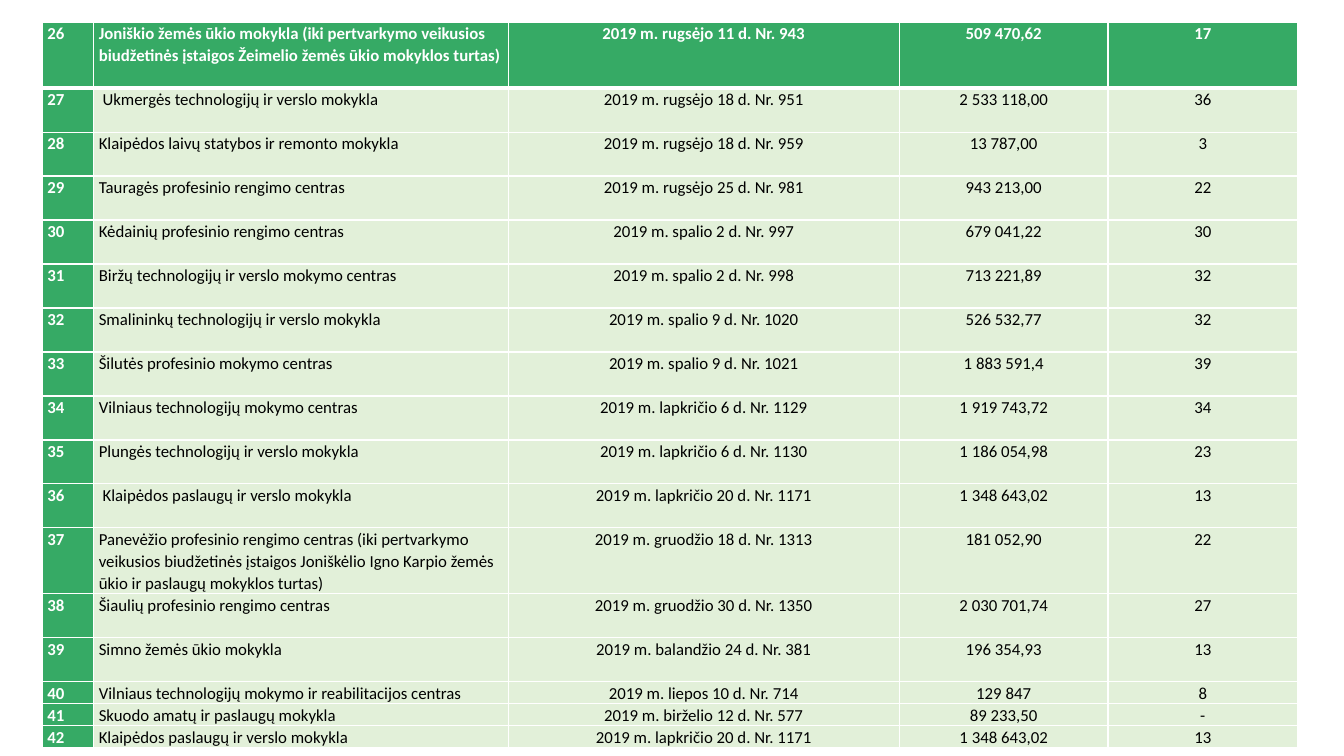
from lxml.etree import SubElement
from pptx import Presentation
from pptx.dml.color import RGBColor
from pptx.enum.text import PP_ALIGN as Align
from pptx.oxml.ns import qn
from pptx.util import Inches, Pt

COLORS = {"green": "36AA65", "pale": "E2F0D9", "white": "FFFFFF", "black": "000000"}
COLUMN_WIDTHS = [0.51, 4.11, 3.88, 2.07, 1.88]
TABLE_HEIGHT = 7.2
FIRST_NUMBER = 26

# Height in text lines, school, decision, property value, count
SCHOOLS = [
    (3, "Joniškio žemės ūkio mokykla (iki pertvarkymo veikusios biudžetinės įstaigos "
        "Žeimelio žemės ūkio mokyklos turtas)",
     "2019 m. rugsėjo 11 d. Nr. 943", "509 470,62", "17"),
    (2, " Ukmergės technologijų ir verslo mokykla",
     "2019 m. rugsėjo 18 d. Nr. 951", "2 533 118,00", "36"),
    (2, "Klaipėdos laivų statybos ir remonto mokykla",
     "2019 m. rugsėjo 18 d. Nr. 959", "13 787,00", "3"),
    (2, "Tauragės profesinio rengimo centras",
     "2019 m. rugsėjo 25 d. Nr. 981", "943 213,00", "22"),
    (2, "Kėdainių profesinio rengimo centras",
     "2019 m. spalio 2 d. Nr. 997", "679 041,22", "30"),
    (2, "Biržų technologijų ir verslo mokymo centras",
     "2019 m. spalio 2 d. Nr. 998", "713 221,89", "32"),
    (2, "Smalininkų technologijų ir verslo mokykla",
     "2019 m. spalio 9 d. Nr. 1020", "526 532,77", "32"),
    (2, "Šilutės profesinio mokymo centras",
     "2019 m. spalio 9 d. Nr. 1021", "1 883 591,4", "39"),
    (2, "Vilniaus technologijų mokymo centras",
     "2019 m. lapkričio 6 d. Nr. 1129", "1 919 743,72", "34"),
    (2, "Plungės technologijų ir verslo mokykla",
     "2019 m. lapkričio 6 d. Nr. 1130", "1 186 054,98", "23"),
    (2, " Klaipėdos paslaugų ir verslo mokykla",
     "2019 m. lapkričio 20 d. Nr. 1171", "1 348 643,02", "13"),
    (3, "Panevėžio profesinio rengimo centras (iki pertvarkymo veikusios biudžetinės "
        "įstaigos Joniškėlio Igno Karpio žemės ūkio ir paslaugų mokyklos turtas)",
     "2019 m. gruodžio 18 d. Nr. 1313", "181 052,90", "22"),
    (2, "Šiaulių profesinio rengimo centras",
     "2019 m. gruodžio 30 d. Nr. 1350", "2 030 701,74", "27"),
    (2, "Simno žemės ūkio mokykla",
     "2019 m. balandžio 24 d. Nr. 381", "196 354,93", "13"),
    (1, "Vilniaus technologijų mokymo ir reabilitacijos centras",
     "2019 m. liepos 10 d. Nr. 714", "129 847", "8"),
    (1, "Skuodo amatų ir paslaugų mokykla",
     "2019 m. birželio 12 d. Nr. 577", "89 233,50", "-"),
    (1, "Klaipėdos paslaugų ir verslo mokykla",
     "2019 m. lapkričio 20 d. Nr. 1171", "1 348 643,02", "13"),
]


def rgb(name):
    return RGBColor.from_string(COLORS[name])


def set_borders(cell, top, bottom):
    """Draw white borders; top and bottom are widths in points."""
    properties = cell._tc.get_or_add_tcPr()
    for side, width in (("L", 1), ("R", 1), ("T", top), ("B", bottom)):
        line = SubElement(properties, qn(f"a:ln{side}"), w=str(Pt(width)))
        fill = SubElement(line, qn("a:solidFill"))
        SubElement(fill, qn("a:srgbClr"), val=COLORS["white"])


def fill_cell(cell, text, emphasized, centered):
    cell.margin_left = cell.margin_right = Inches(0.05)
    cell.margin_top = cell.margin_bottom = 0
    cell.fill.solid()
    cell.fill.fore_color.rgb = rgb("green" if emphasized else "pale")
    cell.text = text
    paragraph = cell.text_frame.paragraphs[0]
    paragraph.alignment = Align.CENTER if centered else Align.LEFT
    paragraph.line_spacing = 1.07
    font = paragraph.font
    font.name, font.size, font.bold = "Calibri", Pt(12), emphasized
    font.color.rgb = rgb("white" if emphasized else "black")


def add_school_table(slide):
    table = slide.shapes.add_table(
        len(SCHOOLS), len(COLUMN_WIDTHS), Inches(0.42), Inches(0.22),
        Inches(sum(COLUMN_WIDTHS)), Inches(TABLE_HEIGHT)).table
    table.horz_banding = False
    for column, width in zip(table.columns, COLUMN_WIDTHS):
        column.width = Inches(width)

    line_height = TABLE_HEIGHT / sum(school[0] for school in SCHOOLS)
    for row_index, (lines, *values) in enumerate(SCHOOLS):
        table.rows[row_index].height = Inches(lines * line_height)
        top = 3 if row_index == 1 else 1
        bottom = 3 if row_index == 0 else 1
        for column_index, text in enumerate([str(FIRST_NUMBER + row_index), *values]):
            cell = table.cell(row_index, column_index)
            set_borders(cell, top, bottom)
            fill_cell(cell, text, emphasized=row_index == 0 or column_index == 0,
                      centered=column_index >= 2)


def main():
    presentation = Presentation()
    presentation.slide_width = Inches(13.33)
    presentation.slide_height = Inches(7.5)
    slide = presentation.slides.add_slide(presentation.slide_layouts[6])
    add_school_table(slide)
    presentation.save("out.pptx")


if __name__ == "__main__":
    main()
